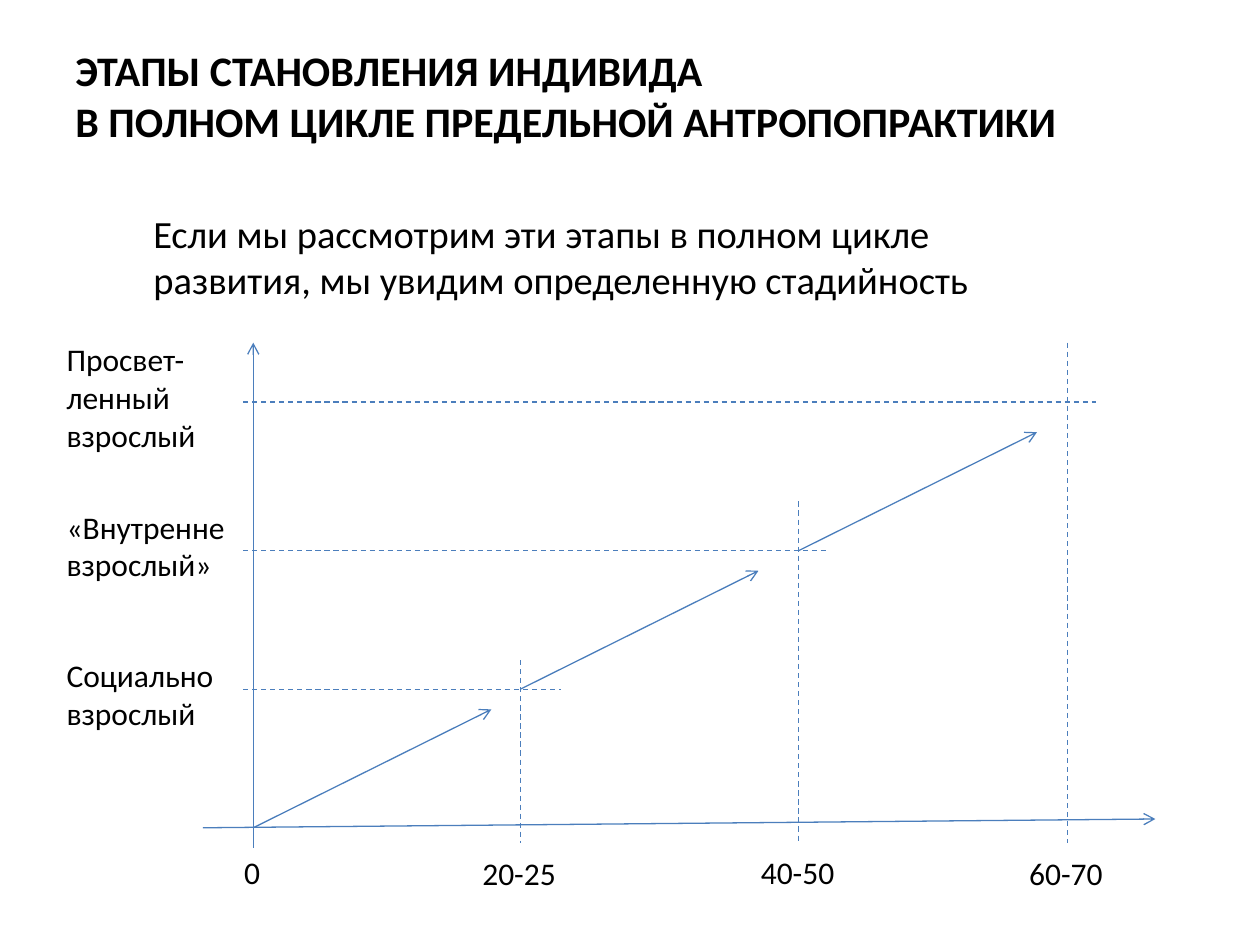
from dataclasses import dataclass

from lxml import etree
from pptx import Presentation
from pptx.dml.color import RGBColor
from pptx.enum import dml, shapes, text
from pptx.oxml import ns
from pptx.util import Inches, Pt


@dataclass(frozen=True)
class Theme:
    font: str = "Calibri"
    ink: RGBColor = RGBColor(0, 0, 0)
    line: RGBColor = RGBColor(0x4B, 0x7E, 0xBC)
    line_width: float = 0.75
    title_size: int = 24
    intro_size: int = 22
    label_size: int = 18


THEME = Theme()


def add_text(slide, box, words, size, bold=False, wrap=True,
             anchor=text.MSO_ANCHOR.TOP):
    frame = slide.shapes.add_textbox(*map(Inches, box)).text_frame
    frame.word_wrap = wrap
    frame.vertical_anchor = anchor
    frame.text = words
    for paragraph in frame.paragraphs:
        for run in paragraph.runs:
            run.font.name = THEME.font
            run.font.size = Pt(size)
            run.font.bold = bold
            run.font.color.rgb = THEME.ink


def add_line(slide, start, end, arrow=False):
    """Draw a solid arrow, or a dashed guide when there is no arrowhead."""
    line = slide.shapes.add_connector(
        shapes.MSO_CONNECTOR.STRAIGHT, *map(Inches, (*start, *end)))
    line.line.color.rgb = THEME.line
    line.line.width = Pt(THEME.line_width)
    if arrow:
        etree.SubElement(line.line._get_or_add_ln(), ns.qn("a:tailEnd"), type="arrow")
    else:
        line.line.dash_style = dml.MSO_LINE.DASH
    etree.SubElement(line._element.spPr, ns.qn("a:effectLst"))


def add_heading(slide, box):
    left, top, width, _ = box
    add_text(slide, (left, top, width, 1.25),
             "ЭТАПЫ СТАНОВЛЕНИЯ ИНДИВИДА\vВ ПОЛНОМ ЦИКЛЕ ПРЕДЕЛЬНОЙ АНТРОПОПРАКТИКИ",
             THEME.title_size, bold=True, anchor=text.MSO_ANCHOR.MIDDLE)
    add_text(slide, (left + 0.62, top + 1.49, 7.34, 0.84),
             "Если мы рассмотрим эти этапы в полном цикле развития, "
             "мы увидим определенную стадийность", THEME.intro_size)


def add_stage_diagram(slide, box):
    left, top, width, height = box
    bottom = top + height
    origin = (left + 0.4, bottom - 0.16)
    label_left = left - 1.18
    rise = (1.89, -0.94)

    # Axes
    add_line(slide, (origin[0], bottom), (origin[0], top), arrow=True)
    add_line(slide, (left, origin[1]), (left + width, origin[1] - 0.07), arrow=True)
    add_text(slide, (origin[0] - 0.17, bottom - 0.01, 0.33, 0.4), "0",
             THEME.label_size, wrap=False)

    # Stages: age, age label drop, name, name box (top, width, height),
    # corner (x, y), guide overrun (right, up)
    stages = [
        ("20-25", 0, "Социально\vвзрослый", (2.44, 1.38, 0.71), (2.52, 2.75), (0.32, 0.23)),
        ("40-50", -0.01, "«Внутренне\vвзрослый»", (1.26, 1.47, 0.71), (4.73, 1.65), (0.23, 0.39)),
        ("60-70", 0, "Просвет-\vленный\vвзрослый", (-0.07, 1.24, 1.01), (6.86, 0.47), (0.23, 0.47)),
    ]
    start = origin
    for age, drop, name, (name_top, name_width, name_height), corner, overrun in stages:
        x, y = left + corner[0], top + corner[1]
        add_line(slide, (origin[0] - 0.08, y), (x + overrun[0], y))
        add_line(slide, (x, y - overrun[1]), (x, bottom - 0.04))
        add_line(slide, start, (start[0] + rise[0], start[1] + rise[1]), arrow=True)
        add_text(slide, (label_left, top + name_top, name_width, name_height),
                 name, THEME.label_size, wrap=False)
        add_text(slide, (x - 0.4, bottom + drop, 0.79, 0.4), age,
                 THEME.label_size, wrap=False)
        start = (x, y)


def main():
    deck = Presentation()
    deck.slide_width, deck.slide_height = Inches(10), Inches(7.5)
    slide = deck.slides.add_slide(deck.slide_layouts[6])
    add_heading(slide, (0.5, 0.13, 9, 2.33))
    add_stage_diagram(slide, (1.61, 2.72, 7.56, 4.01))
    deck.save("out.pptx")


if __name__ == "__main__":
    main()
